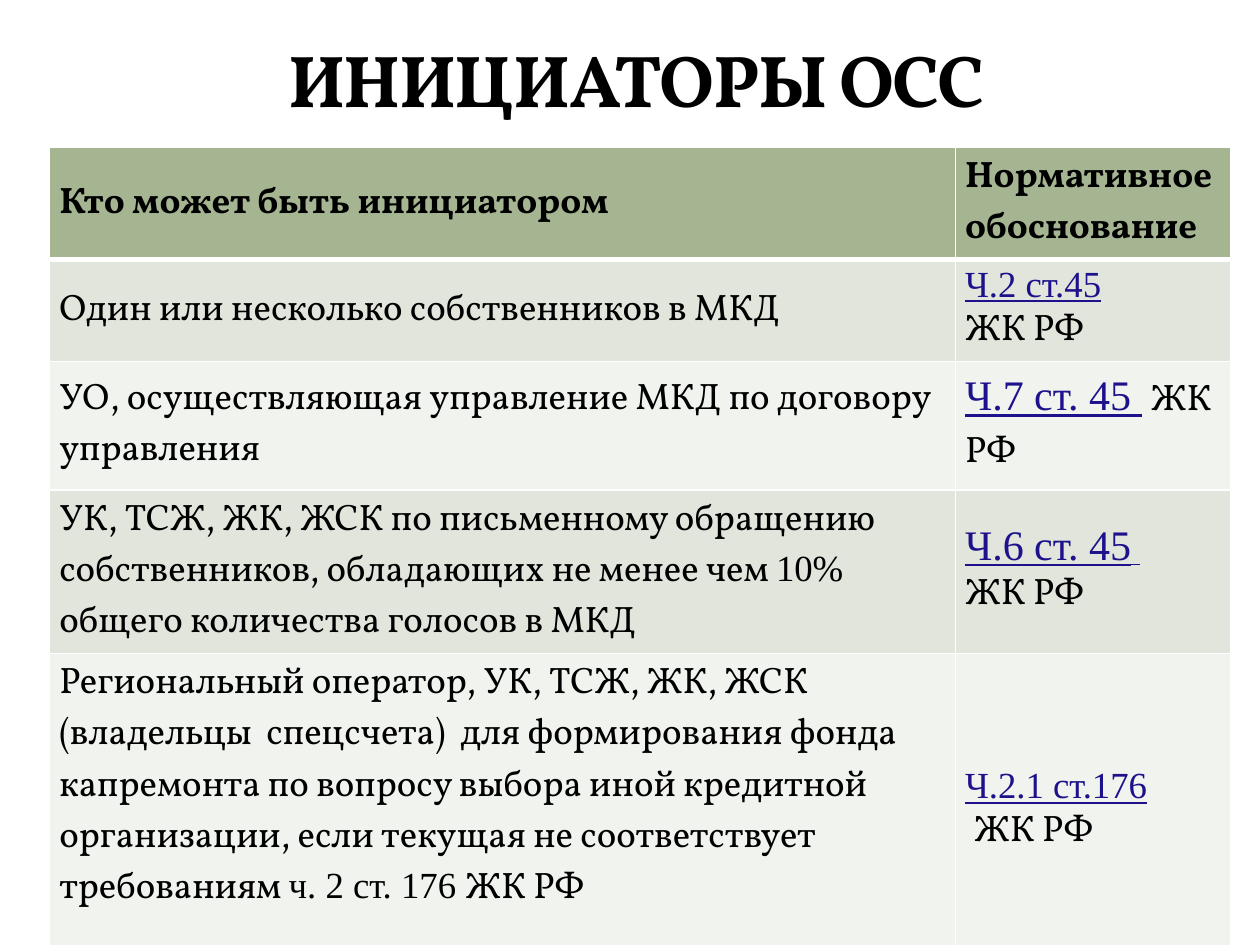
"""Build a slide with a table of who may initiate a general meeting of owners."""
import pptx
import pptx.dml.color
import pptx.enum.text
import pptx.oxml
import pptx.oxml.ns
import pptx.util

Pt = pptx.util.Pt
RGB = pptx.dml.color.RGBColor.from_string
ANCHOR = pptx.enum.text.MSO_ANCHOR

SERIF, TIMES = "Vollkorn", "Times New Roman"
BODY, LINK = Pt(21), Pt(24)
THEME = {
    "ink": "000000", "link": "1E128C", "border": "FFFFFF",
    "header": "A5B592", "bands": ["E1E5DC", "F0F3EE"],
    "styles": {
        "title": {"name": SERIF, "size": Pt(42), "bold": True},
        "header": {"name": SERIF, "size": BODY, "bold": True},
        "body": {"name": SERIF, "size": BODY, "bold": False},
        "times": {"name": TIMES, "size": BODY, "bold": False},
        "gap": {"name": TIMES, "size": BODY, "bold": True},
        "link": {"name": TIMES, "size": BODY, "bold": False, "underline": True},
        "large link": {"name": TIMES, "size": LINK, "bold": False, "underline": True},
        "link gap": {"name": TIMES, "size": BODY, "bold": True, "underline": True},
    },
}


def add_span(para, text, style):
    span = para.add_run()
    span.text = text
    for key, value in THEME["styles"][style].items():
        setattr(span.font, key, value)
    span.font.color.rgb = RGB(THEME["link" if "link" in style else "ink"])
    return span


def add_borders(cell, widths):
    properties = cell._tc.get_or_add_tcPr()
    for index, (side, width) in enumerate(widths.items()):
        properties.insert(index, pptx.oxml.parse_xml(
            f'<a:ln{side} {pptx.oxml.ns.nsdecls("a")} w="{Pt(width)}"><a:solidFill>'
            f'<a:srgbClr val="{THEME["border"]}"/></a:solidFill></a:ln{side}>'))


ROWS = [
    (51, [[("Кто может быть инициатором", "header")]],
     [[("Нормативное обоснование", "header")]]),
    (46, [[("Один или несколько собственников в МКД", "body")]],
     [[("Ч.2 ст.45", "link")], [("ЖК РФ", "body")]]),
    (73.5, [[("УО, осуществляющая управление МКД по договору управления", "body")]],
     [[("Ч.7 ст. 45 ", "large link"), (" ", "gap"), ("ЖК РФ", "body")]]),
    (84, [[("УК, ТСЖ, ЖК, ЖСК по письменному обращению собственников, "
            "обладающих не менее чем ", "body"),
           ("10%", "times"), (" общего количества голосов в МКД", "body")]],
     [[("Ч.6 ст. 45", "large link"), (" ", "link gap")], [("ЖК РФ", "body")]]),
    (45.5, [[("Региональный оператор, УК, ТСЖ, ЖК, ЖСК (владельцы  спецсчета)  для "
              "формирования фонда капремонта по вопросу выбора иной кредитной "
              "организации, если текущая не соответствует требованиям ", "body"),
             ("ч. 2 ст. 176 ", "times"), ("ЖК РФ", "body")]],
     [[("Ч.2.1 ст.176", "link")], [(" ", "gap"), ("ЖК РФ", "body")]]),
]

deck = pptx.Presentation()
deck.slide_width, deck.slide_height = Pt(720), Pt(540)
page = deck.slides.add_slide(deck.slide_layouts[6])

frame = page.shapes.add_table(len(ROWS), 2, Pt(28.3), Pt(84.3), Pt(675.3), Pt(427.7))
table = frame.table
for column, width in zip(table.columns, (517.6, 157.7)):
    column.width = Pt(width)

for row, (height, *contents) in enumerate(ROWS):
    table.rows[row].height = Pt(height)
    fill = THEME["bands"][(row - 1) % 2] if row else THEME["header"]
    for column, paragraphs in enumerate(contents):
        cell = table.cell(row, column)
        cell.vertical_anchor = ANCHOR.MIDDLE
        cell.margin_left = cell.margin_right = Pt(5.6)
        cell.margin_top = cell.margin_bottom = Pt(2.8)
        cell.fill.solid()
        cell.fill.fore_color.rgb = RGB(fill)
        add_borders(cell, {"L": 1, "R": 1, "T": 3 if row == 1 else 1, "B": 1 if row else 3})
        for index, spans in enumerate(paragraphs):
            para = cell.text_frame.add_paragraph() if index else cell.text_frame.paragraphs[0]
            for text, style in spans:
                add_span(para, text, style)
table.cell(len(ROWS) - 1, 0).margin_bottom = Pt(32)

box = page.shapes.add_textbox(Pt(39.6), Pt(11.5), Pt(648), Pt(62))
box.text_frame.word_wrap = True
box.text_frame.vertical_anchor = ANCHOR.BOTTOM
title = box.text_frame.paragraphs[0]
title.alignment = pptx.enum.text.PP_ALIGN.CENTER
heading = add_span(title, "ИНИЦИАТОРЫ ОСС", "title")
heading.font._element.set("spc", "-100")

deck.save("out.pptx")
